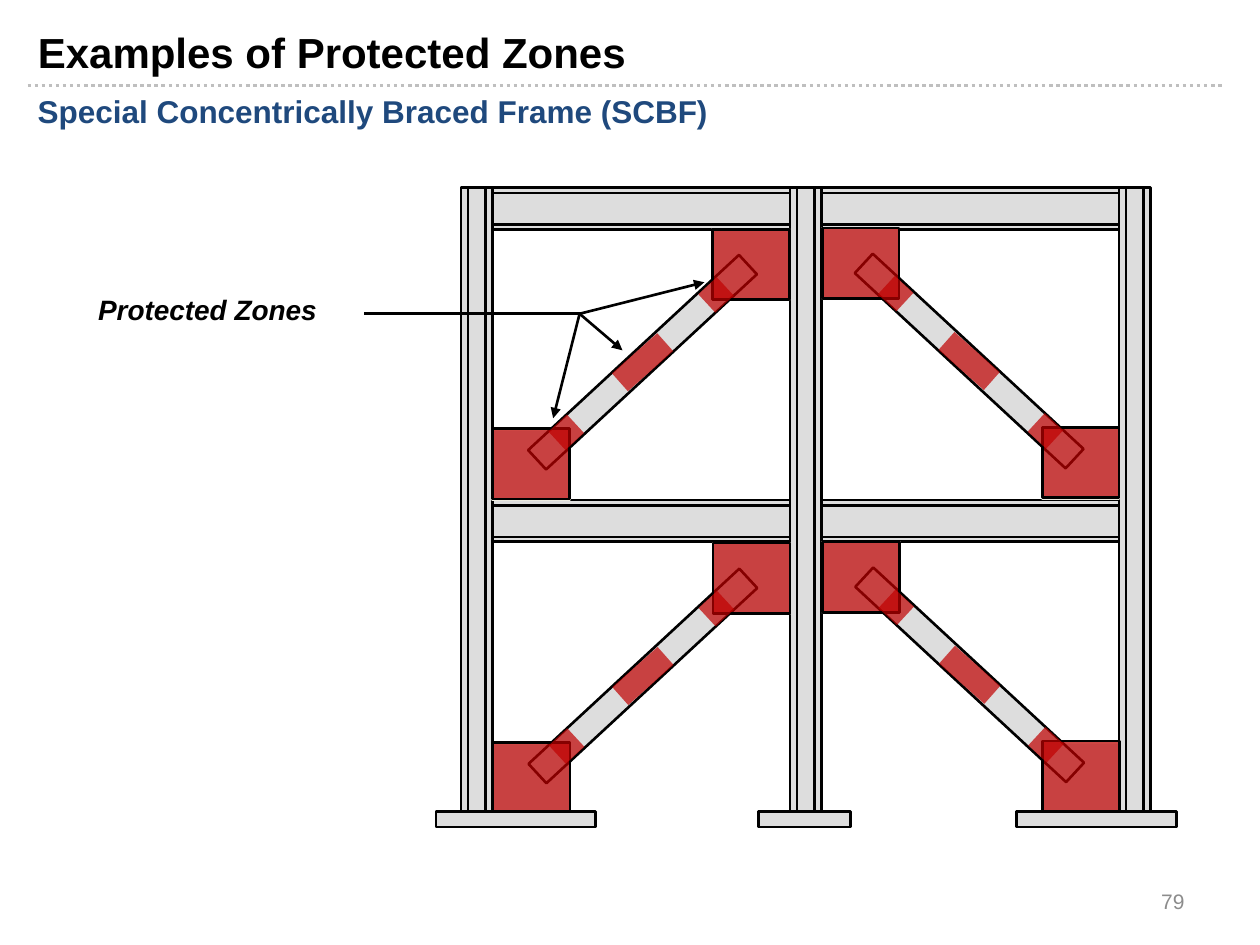
from typing import NamedTuple, Optional

import pptx
import pptx.dml.color
import pptx.enum.dml
import pptx.enum.shapes
import pptx.enum.text
import pptx.oxml
import pptx.oxml.ns
import pptx.util

Pt = pptx.util.Pt
RGBColor = pptx.dml.color.RGBColor
PP_ALIGN = pptx.enum.text.PP_ALIGN
MSO_ANCHOR = pptx.enum.text.MSO_ANCHOR

BLACK = RGBColor(0x00, 0x00, 0x00)
NAVY = RGBColor(0x1F, 0x49, 0x7D)
STEEL = RGBColor(0xDD, 0xDD, 0xDD)
CREAM = RGBColor(0xEE, 0xEC, 0xE1)
RED = RGBColor(0xC0, 0x00, 0x00)
RULE_GRAY = RGBColor(0xBF, 0xBF, 0xBF)
NUMBER_GRAY = RGBColor(0x8C, 0x8C, 0x8C)

FRAME_TOP = 107.3
COLUMN_X = (263.5, 451.45, 639.4)
COLUMN_W, COLUMN_H = 18, 359.3
BEAM_Y = (FRAME_TOP, 285.8)
BEAM_W, BEAM_H = 169.95, 23.8


class BracePart(NamedTuple):
    dx: float
    dy: float
    w: float
    h: float
    angle: float
    fill: RGBColor
    line: Optional[RGBColor]
    alpha: int = 100


class Brace(NamedTuple):
    cx: float
    cy: float
    side: int


class Arrow(NamedTuple):
    x1: float
    y1: float
    x2: float
    y2: float
    head: bool = True


class Label(NamedTuple):
    text: str
    x: float
    y: float
    w: float
    h: float
    size: float
    color: RGBColor
    bold: bool = False
    italic: bool = False
    align: PP_ALIGN = PP_ALIGN.LEFT
    anchor: MSO_ANCHOR = MSO_ANCHOR.TOP


BRACE_PARTS = (
    BracePart(-63.7, 58.7, 43.9, 40.3, 0, STEEL, CREAM),
    BracePart(62, -55.8, 43.9, 40.3, 0, STEEL, CREAM),
    BracePart(0, 0, 164.2, 15.1, -42.8, STEEL, BLACK),
    BracePart(62, -55.8, 43.9, 40.3, 0, RED, BLACK, 70),
    BracePart(42, -38.5, 14.4, 14.4, -42.8, RED, None, 70),
    BracePart(-63.7, 58, 43.9, 40.3, 0, RED, BLACK, 70),
    BracePart(-43.6, 40, 14.4, 14.4, -42.8, RED, None, 70),
    BracePart(0, 0, 34.6, 13.7, -41.6, RED, None, 70),
)
BRACES = (
    Brace(367.2, 207, 1),
    Brace(367.4, 386.3, 1),
    Brace(553.8, 206.3, -1),
    Brace(554.1, 385.6, -1),
)
ARROWS = (
    Arrow(208.1, 179.3, 331.2, 179.3, head=False),
    Arrow(331.2, 179.3, 355.7, 200.2),
    Arrow(331.2, 179.3, 402.5, 161.3),
    Arrow(331.2, 179.3, 316.1, 239),
)
FOOTINGS = ((249.1, 91.4), (581, 91.4), (433.4, 52.6))
TITLE = Label("Examples of Protected Zones", 14.4, 11.5, 646.6, 31.7, 24, BLACK, True)
LABELS = (
    Label("Special Concentrically Braced Frame (SCBF)",
          14.4, 49, 646.6, 35.3, 18, NAVY, True),
    Label("Protected Zones", 49, 163.4, 182.9, 26.6, 16, BLACK, True, True),
    Label("79", 516.2, 500.4, 167.8, 28.8, 12, NUMBER_GRAY,
          align=PP_ALIGN.RIGHT, anchor=MSO_ANCHOR.MIDDLE),
)


def add_rect(shapes, x: float, y: float, w: float, h: float,
             fill: RGBColor = STEEL, line: Optional[RGBColor] = BLACK,
             alpha: int = 100, angle: float = 0) -> None:
    sp = shapes.add_shape(pptx.enum.shapes.MSO_SHAPE.RECTANGLE,
                          Pt(x), Pt(y), Pt(w), Pt(h))
    sp.shadow.inherit = False
    sp.rotation = angle
    sp.fill.solid()
    sp.fill.fore_color.rgb = fill
    if alpha < 100:
        clr = sp.fill._xPr.find(".//" + pptx.oxml.ns.qn("a:srgbClr"))
        node = pptx.oxml.parse_xml(
            f'<a:alpha {pptx.oxml.ns.nsdecls("a")} val="{alpha * 1000}"/>')
        clr.append(node)
    if line is None:
        sp.line.fill.background()
    else:
        sp.line.color.rgb = line
        sp.line.width = Pt(1.5)


def add_line(shapes, x1: float, y1: float, x2: float, y2: float,
             color: RGBColor = BLACK, width: float = 1.5,
             dash=None, head: bool = False) -> None:
    cn = shapes.add_connector(pptx.enum.shapes.MSO_CONNECTOR.STRAIGHT,
                              Pt(x1), Pt(y1), Pt(x2), Pt(y2))
    cn.line.color.rgb = color
    cn.line.width = Pt(width)
    if dash is not None:
        cn.line.dash_style = dash
    ns = pptx.oxml.ns.nsdecls("a")
    if head:
        ln = cn.line._get_or_add_ln()
        ln.append(pptx.oxml.parse_xml(f'<a:tailEnd {ns} type="triangle"/>'))
    cn._element.spPr.append(pptx.oxml.parse_xml(f"<a:effectLst {ns}/>"))


def write_label(sp, label: Label) -> None:
    sp.left, sp.top = Pt(label.x), Pt(label.y)
    sp.width, sp.height = Pt(label.w), Pt(label.h)
    tf = sp.text_frame
    tf.text = label.text
    tf.word_wrap = True
    tf.auto_size = pptx.enum.text.MSO_AUTO_SIZE.NONE
    tf.vertical_anchor = label.anchor
    tf.margin_left = tf.margin_right = Pt(7.2)
    tf.margin_top = tf.margin_bottom = Pt(3.6)
    p = tf.paragraphs[0]
    p.alignment = label.align
    r = p.runs[0]
    r.font.name = "Arial"
    r.font.size = Pt(label.size)
    r.font.bold = label.bold
    r.font.italic = label.italic
    r.font.color.rgb = label.color


def add_frame(shapes) -> None:
    for x in COLUMN_X:
        add_rect(shapes, x, FRAME_TOP, COLUMN_W, COLUMN_H)
        for dx in (4, 14):
            add_line(shapes, x + dx, FRAME_TOP, x + dx, FRAME_TOP + COLUMN_H)
    for y in BEAM_Y:
        for column_x in COLUMN_X[:-1]:
            x = column_x + COLUMN_W
            add_rect(shapes, x, y, BEAM_W, BEAM_H)
            for dy in (3, 21):
                add_line(shapes, x, y + dy, x + BEAM_W, y + dy)


def add_brace(shapes, brace: Brace) -> None:
    for part in BRACE_PARTS:
        x = brace.cx + brace.side * part.dx - part.w / 2
        y = brace.cy + part.dy - part.h / 2
        add_rect(shapes, x, y, part.w, part.h, part.fill, part.line,
                 part.alpha, brace.side * part.angle)


def main() -> None:
    prs = pptx.Presentation()
    prs.slide_width, prs.slide_height = Pt(720), Pt(540)
    s = prs.slides.add_slide(prs.slide_layouts[5])
    add_line(s.shapes, 15.8, 49, 699.8, 49, RULE_GRAY, 2,
             pptx.enum.dml.MSO_LINE.ROUND_DOT)
    write_label(s.shapes.title, TITLE)
    add_frame(s.shapes.add_group_shape().shapes)
    for brace in BRACES:
        add_brace(s.shapes.add_group_shape().shapes, brace)
    for label in LABELS:
        sp = s.shapes.add_textbox(Pt(label.x), Pt(label.y), Pt(label.w), Pt(label.h))
        write_label(sp, label)
    for arrow in ARROWS:
        add_line(s.shapes, arrow.x1, arrow.y1, arrow.x2, arrow.y2, head=arrow.head)
    for x, w in FOOTINGS:
        add_rect(s.shapes, x, 463.7, w, 9)
    prs.save("out.pptx")


if __name__ == "__main__":
    main()
